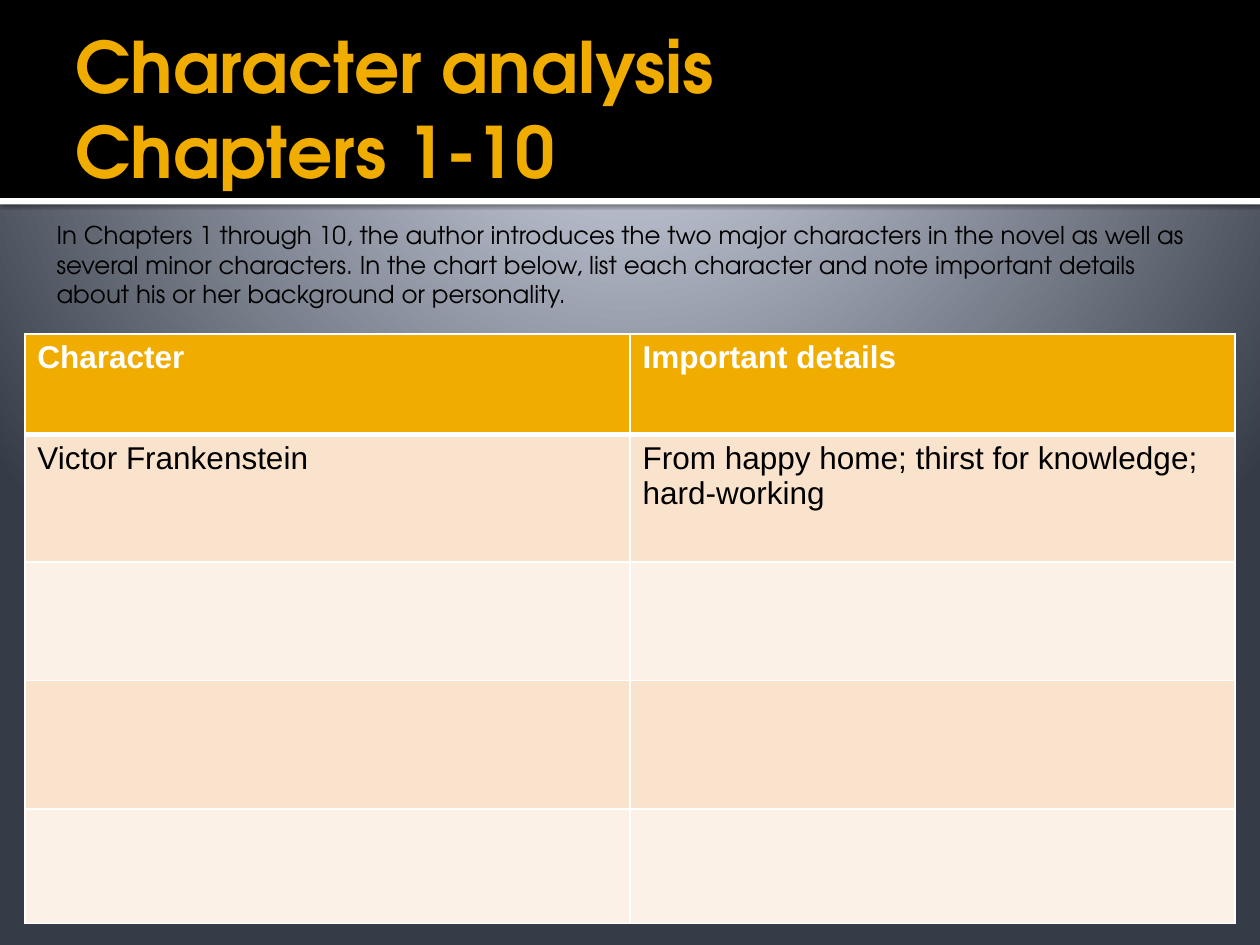
from lxml.etree import SubElement
from pptx import Presentation
from pptx.dml.color import RGBColor
from pptx.enum.shapes import MSO_SHAPE
from pptx.enum.text import MSO_ANCHOR
from pptx.oxml.ns import qn
from pptx.util import Cm, Pt

DISPLAY_FONT = "TeX Gyre Adventor"
TABLE_FONT = "Arial"
GOLD, WHITE, BLACK = "F0AD00", "FFFFFF", "000000"
BANDS = ("F9E3CC", "FCF1E7")
SLIDE_WIDTH, SLIDE_HEIGHT = 25.4, 19.05


def color(hex_value):
    return RGBColor.from_string(hex_value)


def add_color(parent, hex_value):
    return SubElement(parent, qn("a:srgbClr"), val=hex_value)


def write(frame, text, font_color, **font_format):
    """Fill a text frame with one paragraph; a vertical tab breaks the line."""
    frame.word_wrap = True
    paragraph = frame.paragraphs[0]
    paragraph.text = text
    for run in paragraph.runs:
        run.font.color.rgb = color(font_color)
        for name, value in font_format.items():
            setattr(run.font, name, value)


def add_band(slide, left, top, width, height, fill):
    band = slide.shapes.add_shape(
        MSO_SHAPE.RECTANGLE, Cm(left), Cm(top), Cm(width), Cm(height))
    band.fill.solid()
    band.fill.fore_color.rgb = color(fill)
    band.line.fill.background()
    band.shadow.inherit = False
    return band


def paint_background(slide):
    fill = slide.background.fill
    fill.gradient()
    gradient = slide.background._cSld.find(".//" + qn("a:gradFill"))
    for child in list(gradient):
        gradient.remove(child)
    stops = SubElement(gradient, qn("a:gsLst"))
    for percent, shade in ((0, "C1C5D3"), (12, "C1C5D3"), (20, "BFC4D2"), (100, "353B47")):
        add_color(SubElement(stops, qn("a:gs"), pos=str(percent * 1000)), shade)
    circle = SubElement(gradient, qn("a:path"), path="circle")
    SubElement(circle, qn("a:fillToRect"), l="10000", t="-25000", r="10000", b="125000")


def add_header(slide, left, top, width, height):
    # White rule with a soft shadow under the black band
    rule = add_band(slide, left, top + height, width, 0.13, WHITE)
    effects = rule._element.spPr.find(qn("a:effectLst"))
    shadow = SubElement(effects, qn("a:outerShdw"), blurRad=str(Pt(2.5)),
                        dist=str(Pt(0.8)), dir="5400000", algn="tl", rotWithShape="0")
    SubElement(add_color(shadow, BLACK), qn("a:alpha"), val="60000")
    add_band(slide, left, top, width, height, BLACK)

    # Title
    title = slide.shapes.add_textbox(
        Cm(left + 1.27), Cm(top + 0.43), Cm(width - 2.54), Cm(3.48)).text_frame
    title.vertical_anchor = MSO_ANCHOR.MIDDLE
    title.margin_right = Cm(0.13)
    write(title, "Character analysis\vChapters 1-10", GOLD,
          name=DISPLAY_FONT, size=Pt(40.5), bold=True)


def add_instructions(slide, left, top, width, height):
    box = slide.shapes.add_textbox(Cm(left), Cm(top), Cm(width), Cm(height))
    write(box.text_frame,
          "In Chapters 1 through 10, the author introduces the two major characters "
          "in the novel as well as several minor characters. In the chart below, list "
          "each character and note important details about his or her background or "
          "personality.",
          BLACK, name=DISPLAY_FONT, size=Pt(14))


def set_borders(cell, widths):
    properties = cell._tc.get_or_add_tcPr()
    for side, width in widths.items():
        line = SubElement(properties, qn("a:ln" + side), w=str(Pt(width)))
        add_color(SubElement(line, qn("a:solidFill")), WHITE)


def add_character_table(slide, left, top, width, row_heights):
    entries = [
        ("Character", "Important details"),
        ("Victor Frankenstein", "From happy home; thirst for knowledge; hard-working"),
    ]
    table = slide.shapes.add_table(
        len(row_heights), 2, Cm(left), Cm(top), Cm(width), Cm(sum(row_heights))).table
    table.horz_banding = False
    table.first_row = False
    for column in table.columns:
        column.width = Cm(width / 2)

    for index, height in enumerate(row_heights):
        table.rows[index].height = Cm(height)
        is_header = index == 0
        row_fill = GOLD if is_header else BANDS[(index - 1) % 2]
        for side, cell in enumerate(table.rows[index].cells):
            # The rule below the header is heavier than the grid
            set_borders(cell, {"L": 1, "R": 1, "T": 3 if index == 1 else 1,
                               "B": 3 if is_header else 1})
            cell.fill.solid()
            cell.fill.fore_color.rgb = color(row_fill)
            if index < len(entries):
                write(cell.text_frame, entries[index][side],
                      WHITE if is_header else BLACK,
                      name=TABLE_FONT, size=Pt(18), bold=is_header)


def main():
    presentation = Presentation()
    presentation.slide_width = Cm(SLIDE_WIDTH)
    presentation.slide_height = Cm(SLIDE_HEIGHT)
    slide = presentation.slides.add_slide(presentation.slide_layouts[6])

    paint_background(slide)
    add_header(slide, 0, 0, SLIDE_WIDTH, 3.99)
    add_instructions(slide, 0.89, 4.32, 23.39, 2.64)
    add_character_table(slide, 0.5, 6.73, 24.4, (2.03, 2.57, 2.39, 2.59, 2.31))
    presentation.save("out.pptx")


if __name__ == "__main__":
    main()
